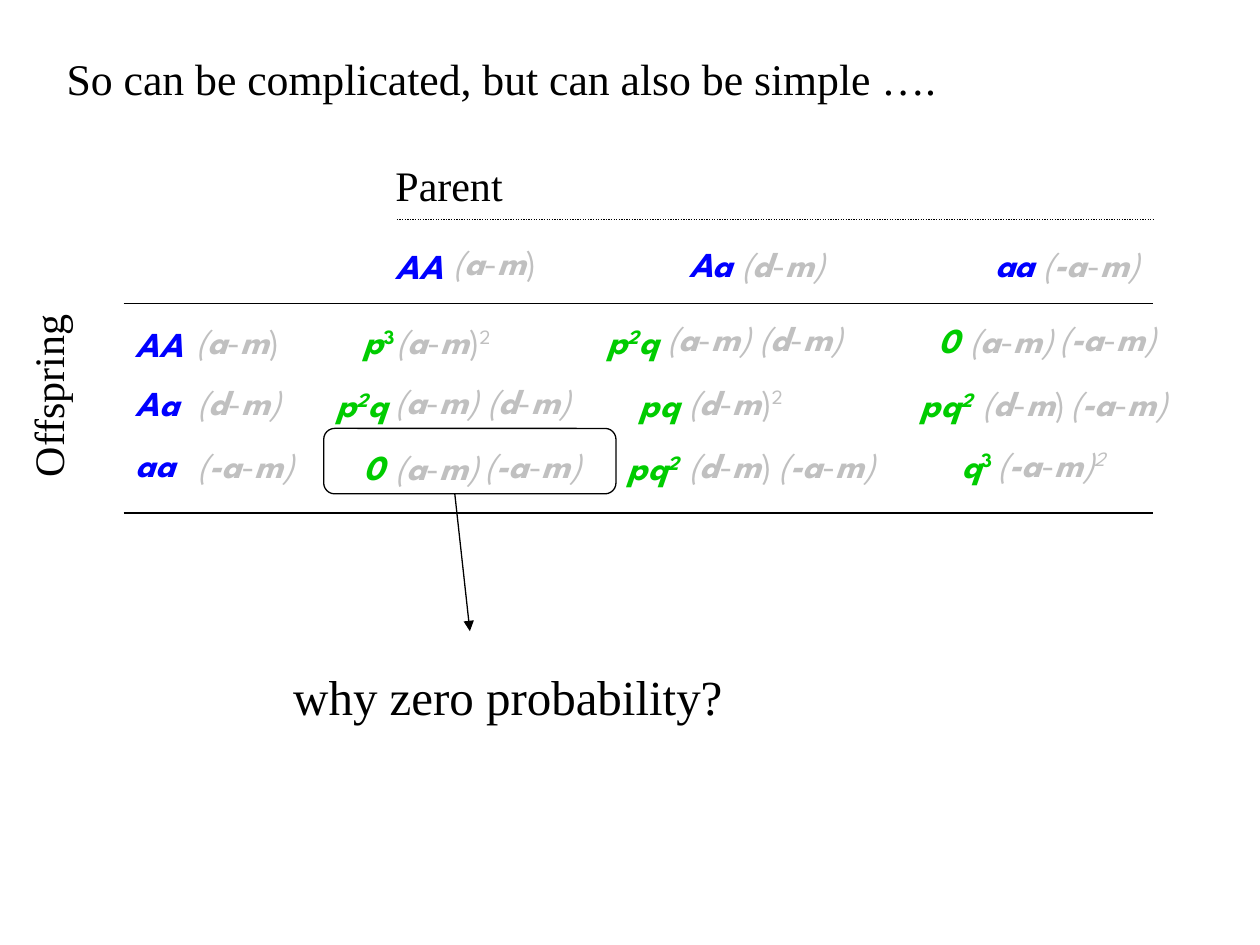
from lxml.etree import SubElement
from pptx import Presentation
from pptx.dml.color import RGBColor
from pptx.enum.dml import MSO_LINE
from pptx.enum.shapes import MSO_CONNECTOR as CONNECTOR, MSO_SHAPE as SHAPE
from pptx.enum.text import MSO_AUTO_SIZE as AUTO_SIZE
from pptx.oxml.ns import qn
from pptx.util import Pt

SERIF, FORMULA = "Times New Roman", "League Spartan"
BLACK, BLUE, GREEN, GREY = "000000", "0000FF", "00CC00", "C0C0C0"

GENOTYPES = {"AA": 44, "Aa": 42, "aa": 40}
DEVIATIONS = {"a": 63.4, "d": 64.1, "-a": 69.8}

GENOTYPE_LABELS = [
    ("AA", 0, 55.4), ("Aa", 0, 89.3), ("aa", 0, 123.8),
    ("AA", 148.3, 10.8), ("Aa", 316.1, 10), ("aa", 491, 10),
]

UPRIGHT, SLANTED = "", "i"
DEVIATION_TERMS = [
    ("a", UPRIGHT, "", 181.4, 8.6), ("d", SLANTED, "", 346.3, 10),
    ("-a", SLANTED, "", 518.4, 10),
    ("a", UPRIGHT, "", 34.6, 54), ("d", SLANTED, "", 35.3, 88.6),
    ("-a", SLANTED, "", 35.3, 124.6),
    ("a", UPRIGHT, "2", 149, 54),
    ("a", SLANTED, "", 303.8, 51.8), ("d", SLANTED, "", 356.4, 51.8),
    ("a", SLANTED, "", 476.6, 53.3), ("-a", SLANTED, "", 527.8, 51.8),
    ("a", SLANTED, "", 148.3, 87.8), ("d", SLANTED, "", 200.9, 87.8),
    ("d", UPRIGHT, "2", 316.1, 88.6),
    ("d", UPRIGHT, "", 483.8, 89.3), ("-a", SLANTED, "", 534.2, 89.3),
    ("a", SLANTED, "", 148.3, 126), ("-a", SLANTED, "", 199.4, 124.6),
    ("d", UPRIGHT, "", 316.1, 124.6), ("-a", SLANTED, "", 367.2, 124.6),
    ("-a", SLANTED, "2", 492.5, 123.8),
]

P_CUBED = [("p", "bi"), ("3", "bs")]
Q_CUBED = [("q", "bi"), ("3", "bs")]
P_SQUARED_Q = [("p", "bi"), ("2", "bis"), ("q", "bi")]
P_Q = [("pq", "bi")]
P_Q_SQUARED = [("pq", "bi"), ("2", "bis")]
ZERO = [("0", "bi")]
PROBABILITIES = [
    (P_CUBED, 33.8, 130.3, 54), (P_SQUARED_Q, 46.1, 269.3, 54),
    (ZERO, 25.9, 458.6, 53.3),
    (P_SQUARED_Q, 46.1, 114.5, 90), (P_Q, 38.9, 288, 90),
    (P_Q_SQUARED, 46.1, 448.6, 90),
    (ZERO, 25.9, 130.3, 126), (P_Q_SQUARED, 46.1, 280.8, 126),
    (Q_CUBED, 33.8, 471.6, 124.6),
]


def color(hex_string):
    return RGBColor.from_string(hex_string)


def add_line(slide, start, end):
    line = slide.shapes.add_connector(
        CONNECTOR.STRAIGHT, *(Pt(value) for value in (*start, *end)))
    line.line.color.rgb = color(BLACK)
    line.line.width = Pt(0.75)
    SubElement(line._element.spPr, qn("a:effectLst"))
    return line


def add_text(slide, box, parts, font, size, ink, wrap=False):
    label = slide.shapes.add_textbox(*(Pt(value) for value in box))
    frame = label.text_frame
    frame.word_wrap = wrap
    frame.auto_size = AUTO_SIZE.NONE if wrap else AUTO_SIZE.SHAPE_TO_FIT_TEXT
    paragraph = frame.paragraphs[0]
    runs = [paragraph.add_run() for _ in parts]
    for run, (text, style) in zip(runs, parts):
        run.text = text
        run.font.bold = "b" in style
        run.font.italic = "i" in style
        if "s" in style:
            run.font._element.set("baseline", "30000")
    for target in (paragraph, *runs):
        target.font.name = font
        target.font.size = Pt(size)
        target.font.color.rgb = color(ink)
    return label


def add_title(slide, box):
    title = add_text(
        slide, box, [("So can be complicated, but can also be simple ….", "")],
        SERIF, 25, BLACK, wrap=True)
    title.text_frame.paragraphs[0].space_before = Pt(5)


def add_mating_table(slide, box):
    left, top, width, height = box
    right = left + width

    def add_formula(parts, x, y, formula_width, ink):
        add_text(slide, (left + x, top + y, formula_width, 31),
                 parts, FORMULA, 20, ink)

    parent_rule = add_line(slide, (left + 156.2, top), (right, top))
    parent_rule.line.dash_style = MSO_LINE.ROUND_DOT
    for rule_top in (top + 48.2, top + height):
        add_line(slide, (left, rule_top), (right, rule_top))

    for genotype, x, y in GENOTYPE_LABELS:
        add_formula([(genotype, "bi")], x, y, GENOTYPES[genotype], BLUE)
    for value, closing, power, x, y in DEVIATION_TERMS:
        parts = [("(", "i"), (value, "bi"), ("-", ""), ("m", "bi"), (")", closing)]
        if power:
            parts.append((power, closing + "s"))
        add_formula(parts, x, y, DEVIATIONS[value] + 7.2 * len(power), GREY)
    for parts, formula_width, x, y in PROBABILITIES:
        add_formula(parts, x, y, formula_width, GREEN)

    add_text(slide, (left + 148.3, top - 37.4, 82.8, 36),
             [("Parent", "")], SERIF, 24, BLACK)
    offspring = add_text(slide, (left - 97.9, top + 82.1, 108.7, 36),
                         [("Offspring", "")], SERIF, 24, BLACK)
    offspring.rotation = 270


def add_zero_question(slide, box):
    left, top, width, height = box
    zero_cell = slide.shapes.add_shape(
        SHAPE.ROUNDED_RECTANGLE, *(Pt(value) for value in box))
    zero_cell.shadow.inherit = False
    zero_cell.fill.background()
    zero_cell.line.color.rgb = color(BLACK)
    zero_cell.line.width = Pt(0.75)

    bottom = top + height
    arrow = add_line(slide, (left + 74.9, bottom), (left + 83.5, bottom + 78.5))
    SubElement(arrow._element.spPr.find(qn("a:ln")), qn("a:tailEnd"), type="triangle")
    add_text(slide, (left - 24.5, bottom + 95, 262.1, 41),
             [("why zero probability?", "")], SERIF, 28, BLACK)


def main():
    deck = Presentation()
    deck.slide_width, deck.slide_height = Pt(720), Pt(540)
    slide = deck.slides.add_slide(deck.slide_layouts[6])
    add_title(slide, (31, 25.9, 663.1, 365.8))
    add_mating_table(slide, (70.6, 125.3, 588.2, 167.8))
    add_zero_question(slide, (185, 244.8, 167, 37.4))
    deck.save("out.pptx")


if __name__ == "__main__":
    main()
